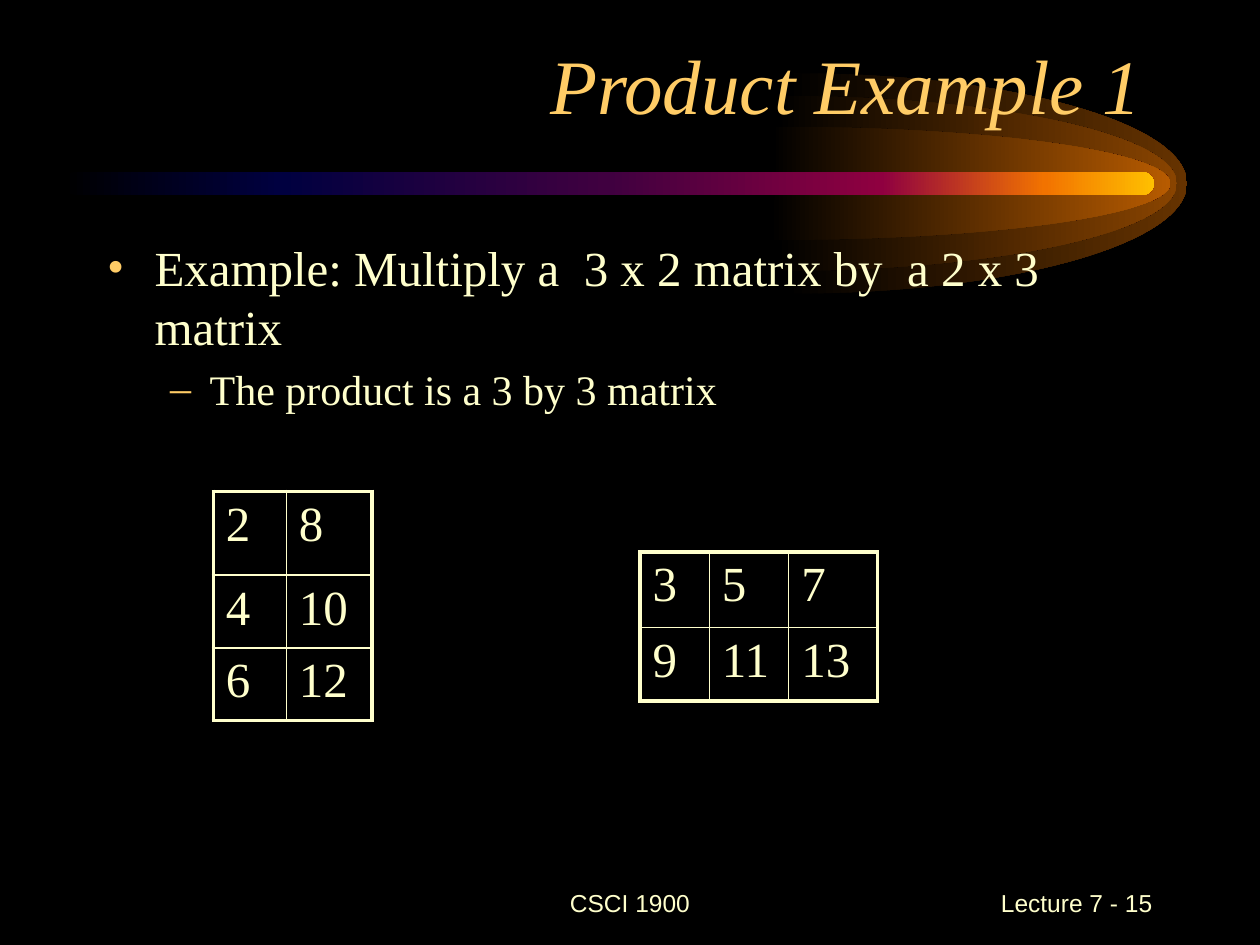
from dataclasses import dataclass

from lxml.etree import SubElement
from pptx import Presentation
from pptx.dml.color import RGBColor
from pptx.enum.shapes import MSO_SHAPE
from pptx.enum.text import MSO_ANCHOR, MSO_AUTO_SIZE, PP_ALIGN
from pptx.oxml.ns import qn
from pptx.util import Inches, Pt

COLS, ROWS = 100, 75
WIDTH, HEIGHT = Inches(10), Inches(7.5)
SERIF, SANS = "Times New Roman", "Arial"
BLACK = RGBColor(0x00, 0x00, 0x00)
GOLD = RGBColor(0xFF, 0xCC, 0x66)
CREAM = RGBColor(0xFF, 0xFF, 0xCC)
BROWN = RGBColor(0x66, 0x33, 0x00)
RUST = RGBColor(0x89, 0x44, 0x00)
AMBER = RGBColor(0xB7, 0x5B, 0x00)
NAVY = RGBColor(0x00, 0x00, 0x40)
PLUM = RGBColor(0x40, 0x00, 0x40)
WINE = RGBColor(0x8F, 0x00, 0x40)
FLAME = RGBColor(0xF2, 0x73, 0x00)
SUN = RGBColor(0xFF, 0xBF, 0x00)
AXIS, REACH, BEND = 14.56, 31.3, 0.55
THIN, THICK = Pt(1), Pt(2.25)


@dataclass
class Halo:
    mid: float
    rise: float
    tint: RGBColor


@dataclass
class Item:
    text: str
    size: int
    mark: str
    left: float
    hang: float


@dataclass
class Label:
    text: str
    box: tuple
    align: PP_ALIGN


@dataclass
class Matrix:
    left: float
    top: float
    widths: list
    heights: list
    rows: list


HALOS = [Halo(62.9, 8.75, BROWN), Halo(62.1, 6.95, RUST), Halo(61.6, 4.5, AMBER)]
BEAM = [(0, BLACK), (20, NAVY), (50, PLUM), (75, WINE), (90, FLAME), (100, SUN)]
ITEMS = [
    Item("Example: Multiply a  3 x 2 matrix by  a 2 x 3 matrix", 28, "•", 3.75, 3.75),
    Item("The product is a 3 by 3 matrix", 24, "–", 8.13, 3.13),
]
LABELS = [
    Label("CSCI 1900", (34.15, 69.15, 31.7, 5), PP_ALIGN.CENTER),
    Label("Lecture 7 - 15", (71.65, 69.15, 20.8, 5), PP_ALIGN.RIGHT),
]
GRIDS = [
    Matrix(16.93, 39, [5.8, 6.8], [6.65, 5.77, 5.77], [[2, 8], [4, 10], [6, 12]]),
    Matrix(50.8, 43.8, [5.5, 6.3, 7.05], [6, 5.85], [[3, 5, 7], [9, 11, 13]]),
]


def across(cols: float) -> int:
    """Turn grid columns into a length."""
    return round(WIDTH * cols / COLS)


def down(rows: float) -> int:
    """Turn grid rows into a length."""
    return round(HEIGHT * rows / ROWS)


def place(left: float, top: float, width: float, height: float) -> tuple:
    """Turn a grid box into lengths."""
    return across(left), down(top), across(width), down(height)


def style(para, face: str, size: float, color: RGBColor, align=None) -> None:
    """Format the runs of a paragraph."""
    para.alignment = align
    for run in para.runs:
        run.font.name, run.font.size = face, Pt(size)
        run.font.color.rgb = color


def shade(shape, stops: list) -> None:
    """Fill a shape with a gradient running left to right."""
    shape.shadow.inherit = False
    shape.line.fill.background()
    shape.fill.gradient()
    shape.fill.gradient_angle = 0
    chain = shape.element.spPr.find(qn("a:gradFill")).find(qn("a:gsLst"))
    for stop in list(chain):
        chain.remove(stop)
    for share, color in stops:
        stop = SubElement(chain, qn("a:gs"), pos=str(share * 1000))
        SubElement(stop, qn("a:srgbClr"), val=str(color))


def curve(shape) -> None:
    """Join each three leading line segments into one Bézier curve."""
    lines = list(shape.element.iter(qn("a:lnTo")))
    for first in (0, 3):
        trio = lines[first:first + 3]
        trio[0].tag = qn("a:cubicBezTo")
        for line in trio[1:]:
            trio[0].append(line[0])
            line.getparent().remove(line)


def draw_halo(shapes, halo: Halo) -> None:
    """Draw the right half of an ellipse around the beam."""
    mid, tip, bend = halo.mid, halo.mid + REACH, halo.mid + REACH * BEND
    top, base, arc = AXIS - halo.rise, AXIS + halo.rise, halo.rise * BEND
    tail = mid - 0.5
    spots = [(bend, top), (tip, AXIS - arc), (tip, AXIS),
             (tip, AXIS + arc), (bend, base), (tail, base), (mid, AXIS)]
    pen = shapes.build_freeform(across(mid), down(top), scale=1.0)
    pen.add_line_segments([(across(x), down(y)) for x, y in spots], close=True)
    shape = pen.convert_to_shape()
    curve(shape)
    shade(shape, [(0, BLACK), (100, halo.tint)])


def draw_items(shapes, items: list) -> None:
    """Write the bulleted text."""
    frame = shapes.add_textbox(*place(7.53, 18.35, 82.6, 18.2)).text_frame
    frame.word_wrap = True
    frame.text = "\n".join(item.text for item in items)
    for level, (para, item) in enumerate(zip(frame.paragraphs, items)):
        para.level = level
        if level:
            para.space_before = Pt(item.size * 0.2)
        props = para._p.get_or_add_pPr()
        props.set("marL", str(across(item.left)))
        props.set("indent", str(-across(item.hang)))
        tint = SubElement(props, qn("a:buClr"))
        SubElement(tint, qn("a:srgbClr"), val=str(GOLD))
        SubElement(props, qn("a:buFont"), typeface=SERIF)
        SubElement(props, qn("a:buChar"), char=item.mark)
        style(para, SERIF, item.size, CREAM)


def draw_label(shapes, label: Label) -> None:
    """Write one footer label."""
    frame = shapes.add_textbox(*place(*label.box)).text_frame
    frame.word_wrap = True
    frame.vertical_anchor = MSO_ANCHOR.MIDDLE
    frame.text = label.text
    style(frame.paragraphs[0], SANS, 14, CREAM, label.align)


def rule(cell, side: str, width: int) -> None:
    """Draw one border of a cell."""
    line = SubElement(cell._tc.get_or_add_tcPr(), qn(f"a:ln{side}"), w=str(width))
    fill = SubElement(line, qn("a:solidFill"))
    SubElement(fill, qn("a:srgbClr"), val=str(CREAM))


def draw_matrix(shapes, grid: Matrix) -> None:
    """Draw a matrix as a table with a thick frame."""
    high, wide = len(grid.heights), len(grid.widths)
    box = place(grid.left, grid.top, sum(grid.widths), sum(grid.heights))
    table = shapes.add_table(high, wide, *box).table
    table.first_row = table.horz_banding = False
    for col, width in zip(table.columns, grid.widths):
        col.width = across(width)
    for row, height in zip(table.rows, grid.heights):
        row.height = down(height)
    for r, values in enumerate(grid.rows):
        for c, value in enumerate(values):
            cell = table.cell(r, c)
            cell.text = str(value)
            style(cell.text_frame.paragraphs[0], SERIF, 28, CREAM)
            edges = {"L": c == 0, "R": c == wide - 1, "T": r == 0, "B": r == high - 1}
            for side, outer in edges.items():
                rule(cell, side, THICK if outer else THIN)
            cell.fill.background()


def draw_title(title, text: str) -> None:
    """Move the title in front of the halos and format it."""
    title.element.getparent().append(title.element)
    title.left, title.top, title.width, title.height = place(6.67, 2.5, 85, 8.3)
    frame = title.text_frame
    frame.text = text
    frame.auto_size = MSO_AUTO_SIZE.NONE
    frame.vertical_anchor = MSO_ANCHOR.BOTTOM
    style(frame.paragraphs[0], SERIF, 44, GOLD, PP_ALIGN.RIGHT)
    frame.paragraphs[0].runs[0].font.italic = True


def main() -> None:
    """Build and save the slide."""
    deck = Presentation()
    deck.slide_width, deck.slide_height = WIDTH, HEIGHT
    slide = deck.slides.add_slide(deck.slide_layouts[5])
    slide.background.fill.solid()
    slide.background.fill.fore_color.rgb = BLACK
    shapes = slide.shapes
    for halo in HALOS:
        draw_halo(shapes, halo)
    beam = shapes.add_shape(MSO_SHAPE.ROUNDED_RECTANGLE, *place(5, 13.66, 86.6, 1.8))
    beam.adjustments[0] = 0.5
    shade(beam, BEAM)
    for label in LABELS:
        draw_label(shapes, label)
    draw_title(shapes.title, "Product Example 1")
    draw_items(shapes, ITEMS)
    for grid in GRIDS:
        draw_matrix(shapes, grid)
    deck.save("out.pptx")


if __name__ == "__main__":
    main()
